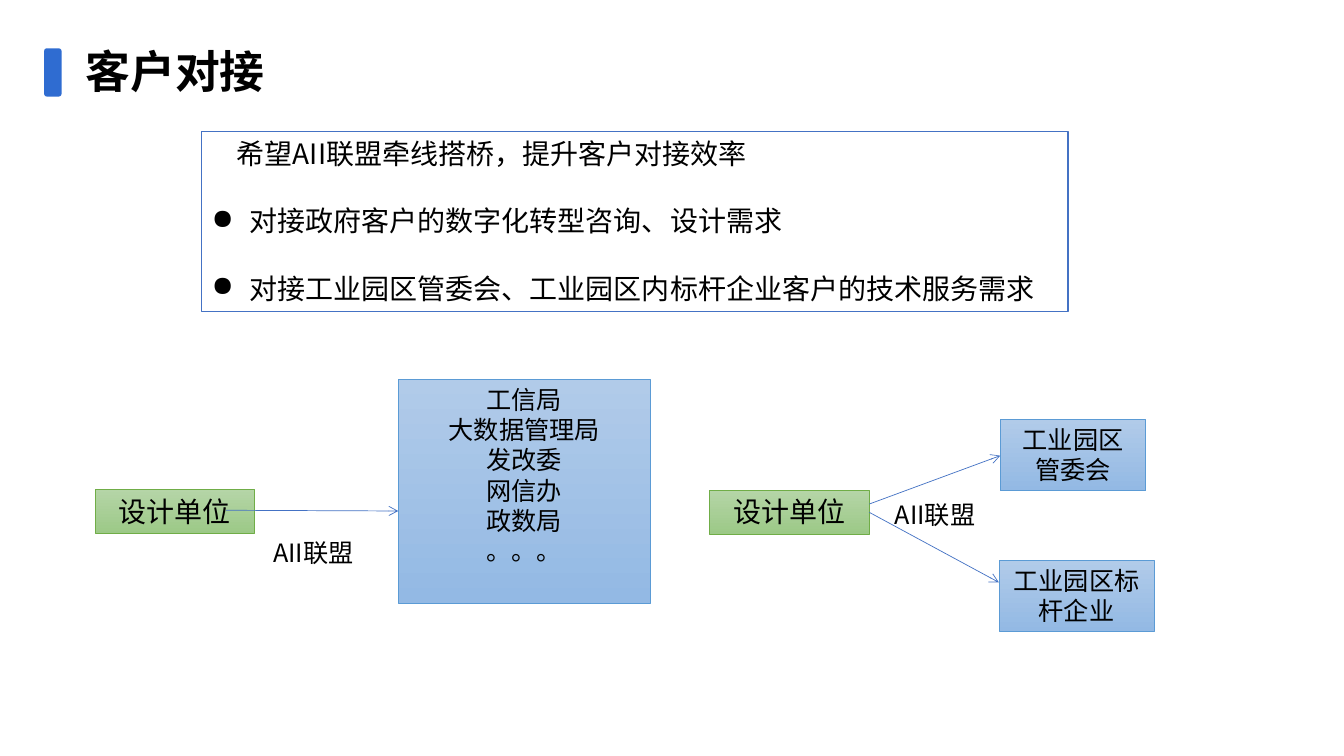
import pptx
import pptx.dml.color
import pptx.enum.shapes
import pptx.enum.text
import pptx.oxml.ns
import pptx.util
from lxml import etree

Pt = pptx.util.Pt
SHAPE = pptx.enum.shapes.MSO_SHAPE
ALIGN = pptx.enum.text.PP_ALIGN
FONT = "Noto Sans CJK SC"
BLUE = ("B1CBE9", "93B9E4", "5B9BD5")
GREEN = ("B5D5A7", "9CC987", "70AD47")
qn = pptx.oxml.ns.qn


def color(value):
    return pptx.dml.color.RGBColor.from_string(value)


def write(box, lines, size, align=ALIGN.LEFT, bold=False, wrap=True):
    frame = box.text_frame
    frame.word_wrap = wrap
    frame.vertical_anchor = pptx.enum.text.MSO_ANCHOR.TOP
    frame.text = "\n".join(lines)
    for para in frame.paragraphs:
        para.alignment = align
        para.line_spacing = Pt(size * 1.2)
        para.font.size = Pt(size)
        para.font.bold = bold
        para.font.color.rgb = color("000000")
        para.font.name = FONT
        etree.SubElement(para.font._element, qn("a:ea"), typeface=FONT)


deck = pptx.Presentation()
deck.slide_width, deck.slide_height = Pt(960), Pt(540)
page = deck.slides.add_slide(deck.slide_layouts[6])
shapes = page.shapes

# Title with accent bar
title = shapes.add_textbox(Pt(54), Pt(27.5), Pt(142.5), Pt(46))
write(title, ["客户对接"], 32, bold=True, wrap=False)
accent = shapes.add_shape(SHAPE.ROUNDED_RECTANGLE, Pt(31.5), Pt(34.5), Pt(12.5), Pt(34.5))
accent.shadow.inherit = False
accent.fill.solid()
accent.fill.fore_color.rgb = color("2F6CD1")
accent.line.fill.background()

# Framed request with two bullets
request = shapes.add_shape(SHAPE.RECTANGLE, Pt(144), Pt(94), Pt(619), Pt(128.5))
request.shadow.inherit = False
request.fill.solid()
request.fill.fore_color.rgb = color("FFFFFF")
request.line.color.rgb = color("4472C4")
request.line.width = Pt(1)
request.text_frame.text = ""
write(request, ["希望AII联盟牵线搭桥，提升客户对接效率",
                "对接政府客户的数字化转型咨询、设计需求",
                "对接工业园区管委会、工业园区内标杆企业客户的技术服务需求"], 20)
intro, *bullets = request.text_frame.paragraphs
intro._p.get_or_add_pPr().set("indent", str(Pt(18)))
for para in bullets:
    para.space_before = Pt(24)
    props = para._p.get_or_add_pPr()
    props.set("marL", str(Pt(27)))
    props.set("indent", str(Pt(-27)))
    bullet = etree.Element(qn("a:buChar"), char="●")
    props.find(qn("a:defRPr")).addprevious(bullet)

# Party boxes: left, top, width, height, palette, size, lines
agencies = ["工信局", "大数据管理局", "发改委", "网信办", "政数局", "。。。"]
parties = [
    (284.5, 271, 180, 160, BLUE, 18, agencies),
    (68, 349.5, 114, 31.5, GREEN, 20, ["设计单位"]),
    (507, 350, 114, 31.5, GREEN, 20, ["设计单位"]),
    (714.5, 299.5, 104, 51, BLUE, 18, ["工业园区管委会"]),
    (713.5, 400, 111, 51, BLUE, 18, ["工业园区标杆企业"]),
]
for left, top, width, height, (light, dark, edge), size, lines in parties:
    box = shapes.add_shape(SHAPE.RECTANGLE, Pt(left), Pt(top), Pt(width), Pt(height))
    box.shadow.inherit = False
    box.fill.gradient()
    box.fill.gradient_angle = 270
    for stop, shade in zip(box.fill.gradient_stops, (light, dark)):
        stop.color.rgb = color(shade)
    box.line.color.rgb = color(edge)
    box.line.width = Pt(0.5)
    write(box, lines, size, ALIGN.CENTER)

# Arrows from the designer to its customers
for x1, y1, x2, y2 in [(161.5, 364.5, 284.5, 365),
                       (621, 360, 714.5, 325.5),
                       (621, 366, 713.5, 416)]:
    arrow = shapes.add_connector(pptx.enum.shapes.MSO_CONNECTOR.STRAIGHT,
                                 Pt(x1), Pt(y1), Pt(x2), Pt(y2))
    arrow.line.color.rgb = color("4472C4")
    arrow.line.width = Pt(0.5)
    etree.SubElement(arrow.line._get_or_add_ln(), qn("a:tailEnd"), type="arrow")
    etree.SubElement(arrow._element.spPr, qn("a:effectLst"))

# Alliance labels
for left, top in [(188, 380), (632, 353)]:
    label = shapes.add_textbox(Pt(left), Pt(top), Pt(90.5), Pt(29))
    write(label, ["AII联盟"], 18)

deck.save("out.pptx")
